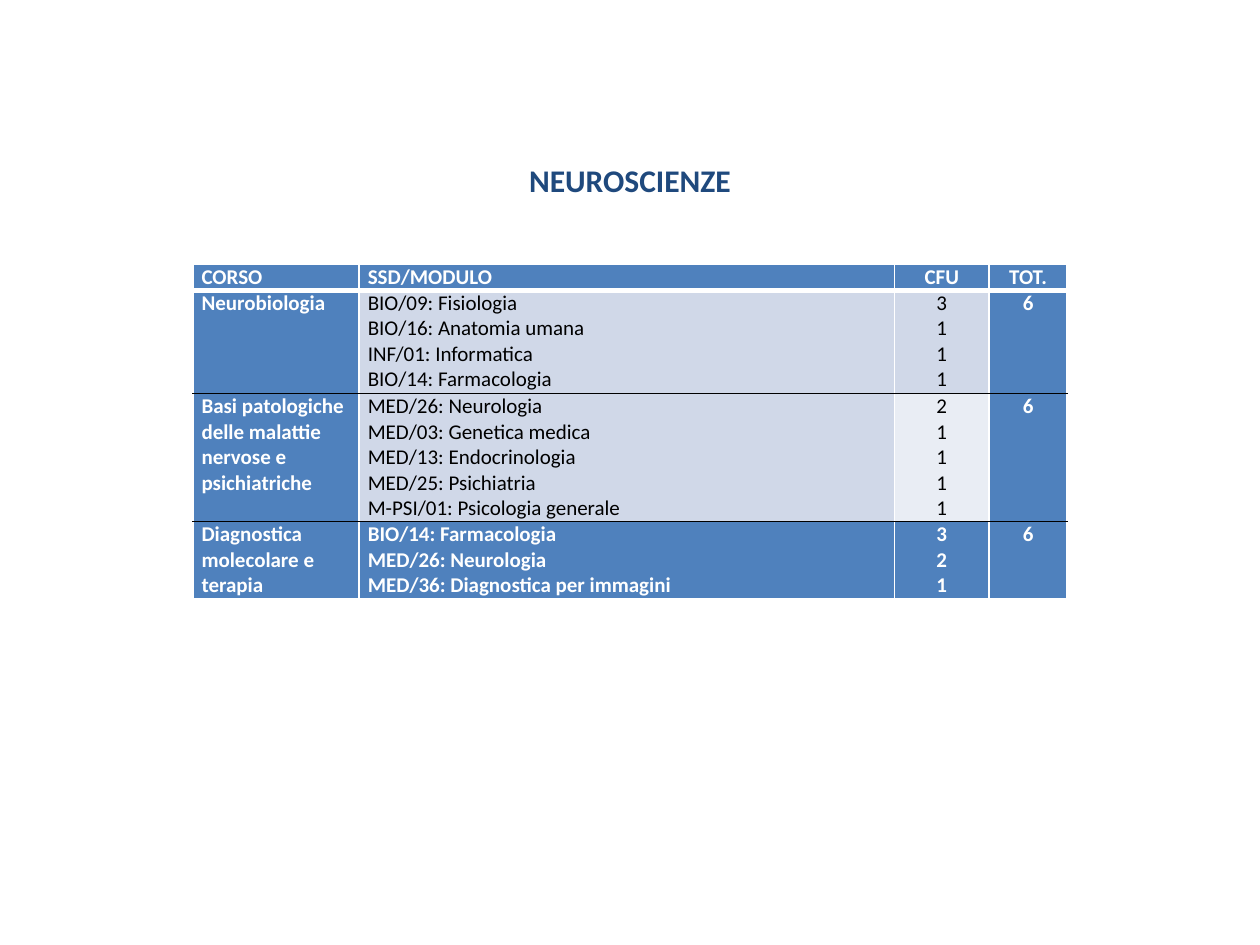
from dataclasses import dataclass

import pptx
import pptx.dml.color
import pptx.enum.text
import pptx.oxml
import pptx.oxml.ns
import pptx.util
from pptx.util import Inches

CENTER = pptx.enum.text.PP_ALIGN.CENTER
LEFT = pptx.enum.text.PP_ALIGN.LEFT


@dataclass(frozen=True)
class Theme:
    font: str = "Calibri"
    title_size: int = 18
    table_size: int = 12
    title: str = "1F497D"
    blue: str = "4F81BD"
    band: str = "D0D8E8"
    pale: str = "E9EDF4"
    white: str = "FFFFFF"
    black: str = "000000"


THEME = Theme()

# Each row holds four cells; each cell is a list of paragraphs
ROWS = [
    [["CORSO"], ["SSD/MODULO"], ["CFU"], ["TOT."]],
    [
        ["Neurobiologia"],
        ["BIO/09: Fisiologia", "BIO/16: Anatomia umana",
         "INF/01: Informatica", "BIO/14: Farmacologia"],
        ["3", "1", "1", "1"],
        ["6"],
    ],
    [
        ["Basi patologiche delle malattie nervose e psichiatriche"],
        ["MED/26: Neurologia", "MED/03: Genetica medica",
         "MED/13: Endocrinologia", "MED/25: Psichiatria",
         "M-PSI/01: Psicologia generale"],
        ["2", "1", "1", "1", "1"],
        ["6"],
    ],
    [
        ["Diagnostica molecolare e terapia"],
        ["BIO/14: Farmacologia", "MED/26: Neurologia",
         "MED/36: Diagnostica per immagini"],
        ["3", "2", "1"],
        ["6"],
    ],
]
COLUMN_WIDTHS = [1.32, 4.25, 0.75, 0.62]
ROW_HEIGHTS = [0.2, 0.82, 1.0, 0.6]
ALIGNMENTS = [LEFT, LEFT, CENTER, CENTER]

# Cells that differ from the solid blue ones: (row, column) to fill
LIGHT_FILLS = {
    (1, 1): THEME.band, (1, 2): THEME.band,
    (2, 1): THEME.band, (2, 2): THEME.pale,
}

# Horizontal rules from top to bottom: colour and width in points
RULES = [(THEME.white, 1), (THEME.white, 3), (THEME.black, 1),
         (THEME.black, 1), (THEME.white, 1)]


def rgb(color):
    return pptx.dml.color.RGBColor.from_string(color)


def write_paragraphs(text_frame, lines, size, color, bold, alignment):
    text_frame.text = "\n".join(lines)
    for paragraph in text_frame.paragraphs:
        paragraph.alignment = alignment
        font = paragraph.font
        font.name = THEME.font
        font.size = pptx.util.Pt(size)
        font.bold = bold
        font.color.rgb = rgb(color)


def set_borders(cell, top, bottom):
    side = (THEME.white, 1)
    borders = {"lnL": side, "lnR": side, "lnT": top, "lnB": bottom}
    properties = cell._tc.get_or_add_tcPr()
    # Borders must come before the fill
    for position, (tag, (color, width)) in enumerate(borders.items()):
        line = pptx.oxml.parse_xml(
            f'<a:{tag} {pptx.oxml.ns.nsdecls("a")} w="{pptx.util.Pt(width)}">'
            f'<a:solidFill><a:srgbClr val="{color}"/></a:solidFill></a:{tag}>'
        )
        properties.insert(position, line)


def add_title(slide, text):
    shape = slide.shapes.add_textbox(
        Inches(4.09), Inches(1.23), Inches(1.82), Inches(0.4))
    shape.text_frame.word_wrap = False
    shape.text_frame.auto_size = pptx.enum.text.MSO_AUTO_SIZE.SHAPE_TO_FIT_TEXT
    write_paragraphs(shape.text_frame, [text], THEME.title_size,
                     THEME.title, True, CENTER)


def fill_cell(cell, lines, row, column):
    light = (row, column) in LIGHT_FILLS
    cell.margin_left = cell.margin_right = Inches(0.07)
    cell.margin_top = cell.margin_bottom = 0
    cell.fill.solid()
    cell.fill.fore_color.rgb = rgb(LIGHT_FILLS.get((row, column), THEME.blue))
    write_paragraphs(cell.text_frame, lines, THEME.table_size,
                     THEME.black if light else THEME.white,
                     not light, ALIGNMENTS[column])
    set_borders(cell, RULES[row], RULES[row + 1])


def add_course_table(slide):
    table = slide.shapes.add_table(
        len(ROWS), len(COLUMN_WIDTHS), Inches(1.53), Inches(2.1),
        Inches(sum(COLUMN_WIDTHS)), Inches(sum(ROW_HEIGHTS))).table
    for column, width in zip(table.columns, COLUMN_WIDTHS):
        column.width = Inches(width)
    for row, height in zip(table.rows, ROW_HEIGHTS):
        row.height = Inches(height)
    for row, cells in enumerate(ROWS):
        for column, lines in enumerate(cells):
            fill_cell(table.cell(row, column), lines, row, column)


def main():
    presentation = pptx.Presentation()
    presentation.slide_width = Inches(10)
    presentation.slide_height = Inches(7.5)
    slide = presentation.slides.add_slide(presentation.slide_layouts[6])
    add_course_table(slide)
    add_title(slide, "NEUROSCIENZE")
    presentation.save("out.pptx")


if __name__ == "__main__":
    main()
